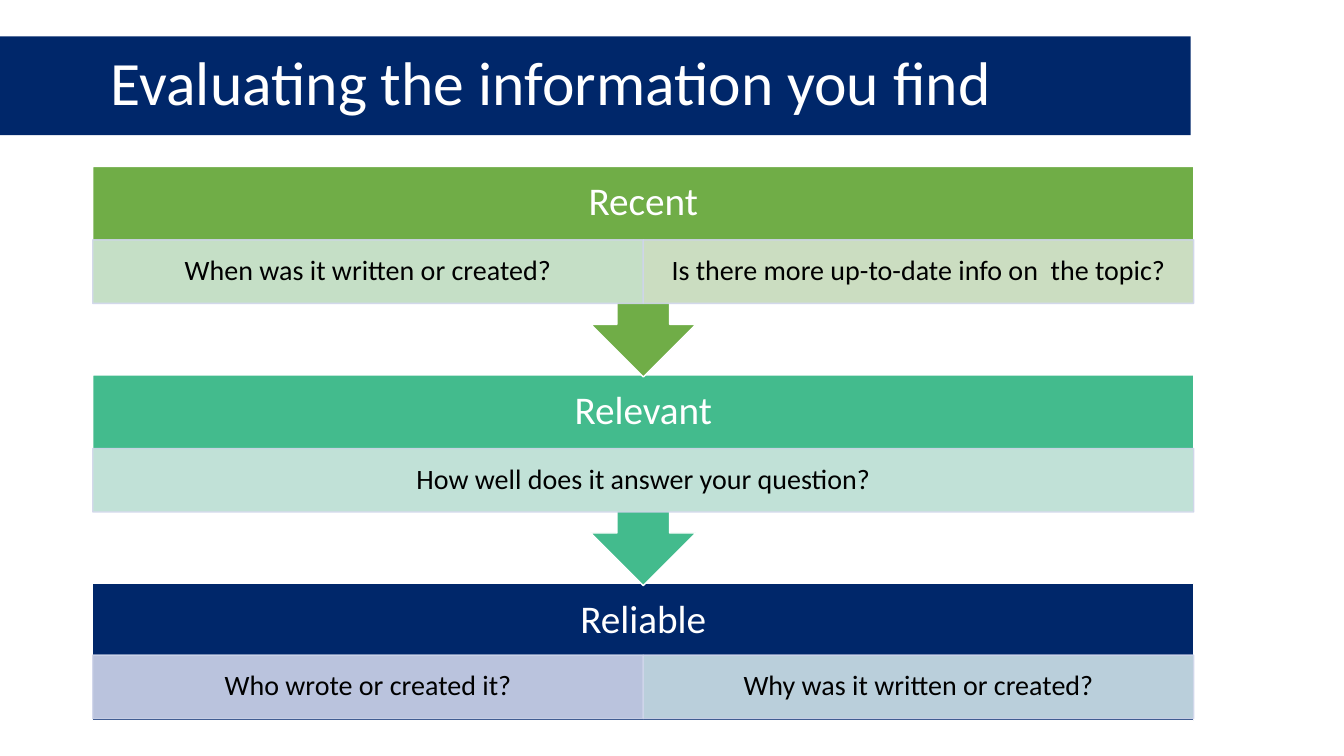
from lxml import etree
from pptx import Presentation
from pptx import util as u
from pptx.dml import color
from pptx.enum import shapes, text
from pptx.oxml import ns

PX = 9144
NAVY, GREEN, TEAL, WHITE, BLACK = "00276A", "70AD47", "43BB8D", "FFFFFF", "000000"
CELL_LINE = "CFD5EA"
RECT = shapes.MSO_SHAPE.RECTANGLE
CALLOUT = shapes.MSO_SHAPE.UP_ARROW_CALLOUT
LEFT, CENTER = text.PP_ALIGN.LEFT, text.PP_ALIGN.CENTER

STEPS = [
    dict(title="Recent", top=165, height=209, header=73, kind=CALLOUT, fill=GREEN,
         questions=[("When was it written or created?", "CFE5D4"),
                    ("Is there more up-to-date info on  the topic?", "D5E3CF")]),
    dict(title="Relevant", top=372, height=209, header=73, kind=CALLOUT, fill=TEAL,
         questions=[("How well does it answer your question?", "CFE6E0")]),
    dict(title="Reliable", top=579, height=136, header=71, kind=RECT, fill=NAVY,
         questions=[("Who wrote or created it?", "CFD5EA"),
                    ("Why was it written or created?", "CFE2E8")]),
]


def px(n):
    return u.Emu(round(n * PX))


def rgb(value):
    return color.RGBColor.from_string(value)


def set_all(target, values):
    for name, value in values.items():
        setattr(target, name, value)


def set_alpha(fill_parent, percent):
    for clr in fill_parent.iter(ns.qn("a:srgbClr")):
        etree.SubElement(clr, ns.qn("a:alpha"), val=str(percent * 1000))


def add_block(s, kind, box, fill, line=None):
    sp = s.shapes.add_shape(kind, *map(px, box))
    sp.shadow.inherit = False
    sp.fill.solid()
    sp.fill.fore_color.rgb = rgb(fill)
    if line:
        sp.line.color.rgb = rgb(line)
        sp.line.width = u.Pt(1)
    else:
        sp.line.fill.background()
    return sp


def write(sp, words, size, ink, insets, align=CENTER):
    tf = sp.text_frame
    sides = ("margin_left", "margin_top", "margin_right", "margin_bottom")
    set_all(tf, dict(zip(sides, map(px, insets))))
    set_all(tf, dict(word_wrap=True, vertical_anchor=text.MSO_ANCHOR.MIDDLE))
    p = tf.paragraphs[0]
    set_all(p, dict(alignment=align, line_spacing=0.9))
    r = p.add_run()
    r.text = words
    set_all(r.font, dict(name="Calibri", size=u.Pt(size)))
    r.font.color.rgb = rgb(ink)


def add_title(s, box):
    sp = add_block(s, RECT, box, NAVY)
    write(sp, "Evaluating the information you find", 44, WHITE, (110, 5, 10, 5), LEFT)


def add_questions(s, box, questions):
    left, top, width, height = box
    cell = width / len(questions)
    for i, (words, fill) in enumerate(questions):
        sp = add_block(s, RECT, (left + i * cell, top, cell, height), fill, CELL_LINE)
        set_alpha(sp.element.spPr, 90)
        write(sp, words, 20, BLACK, (16, 3, 16, 3))


def add_step(s, box, step):
    left, top, width, height = box
    sp = add_block(s, step["kind"], box, step["fill"], WHITE)
    if step["kind"] == CALLOUT:
        sp.rotation = 180
    header = s.shapes.add_textbox(*map(px, (left, top, width, 73)))
    write(header, step["title"], 28, WHITE, (22, 22, 22, 22))
    add_questions(s, (left, top + step["header"], width, 63), step["questions"])


def main():
    prs = Presentation()
    set_all(prs, dict(slide_width=px(1333), slide_height=px(750)))
    s = prs.slides.add_slide(prs.slide_layouts[6])
    add_title(s, (0, 36, 1181, 98))
    for step in reversed(STEPS):
        add_step(s, (92, step["top"], 1092, step["height"]), step)
    prs.save("out.pptx")


if __name__ == "__main__":
    main()
